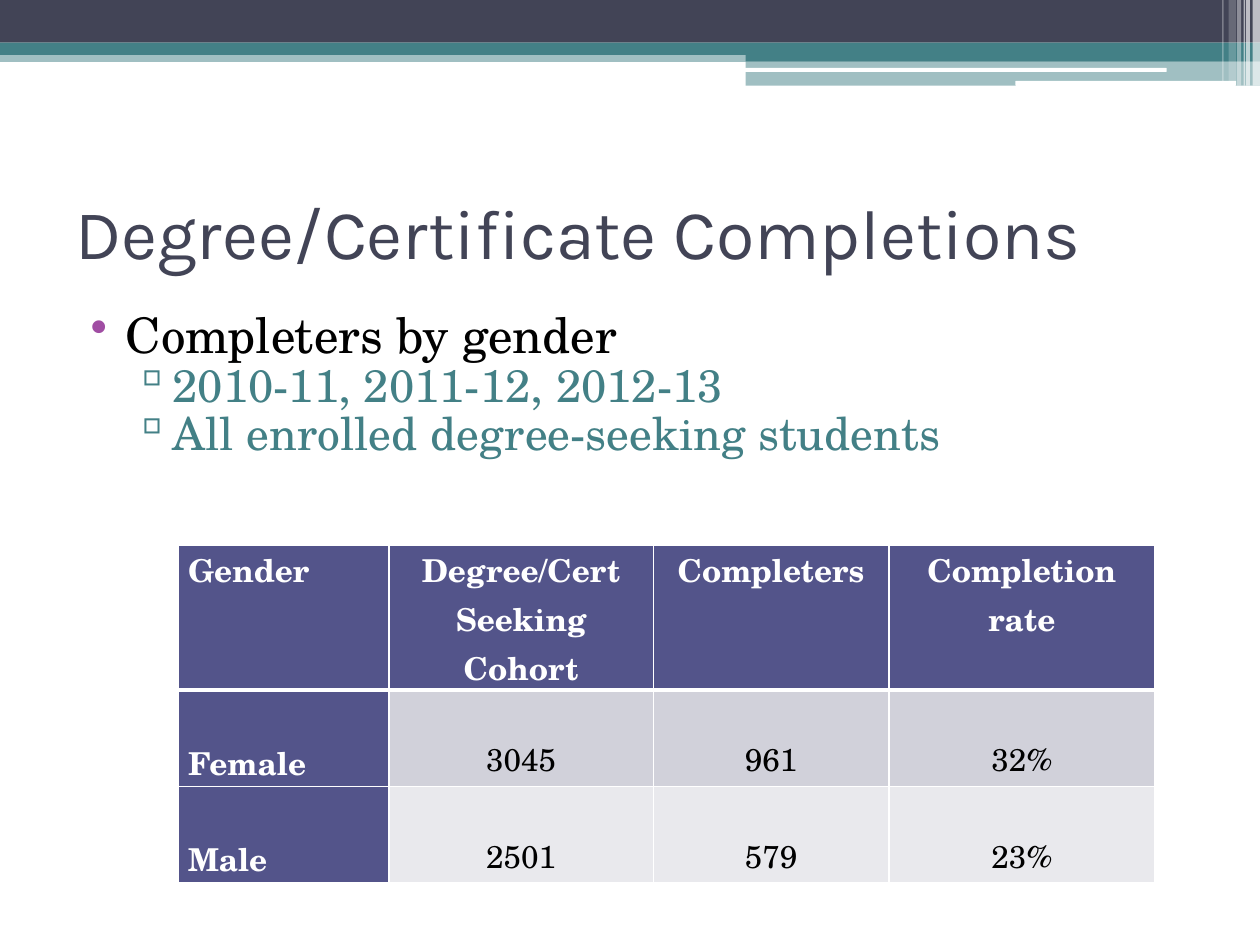
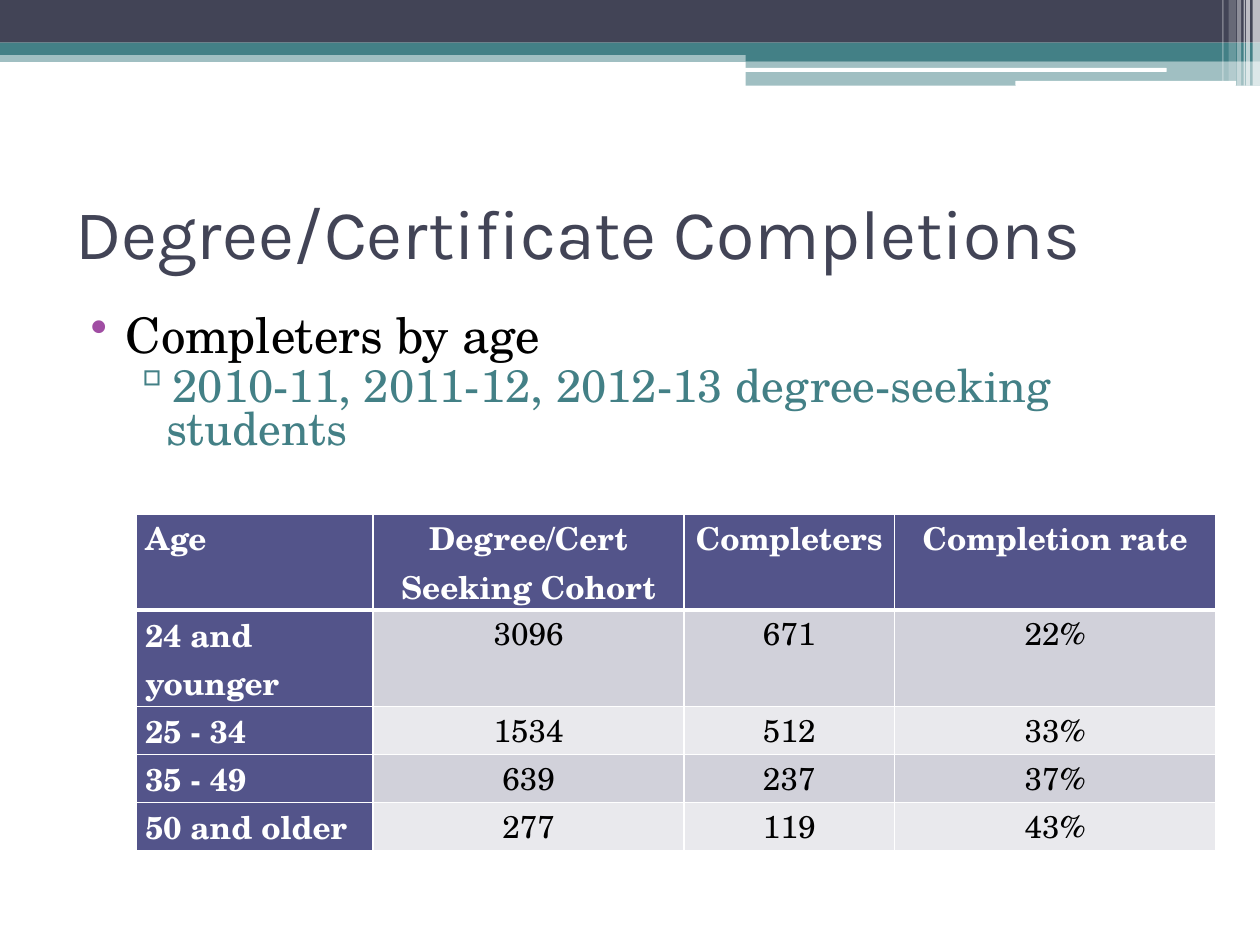
from lxml import etree
from pptx import Presentation
from pptx.dml.color import RGBColor
from pptx.enum.shapes import MSO_SHAPE
from pptx.enum.text import MSO_ANCHOR, PP_ALIGN
from pptx.oxml.ns import qn
from pptx.util import Cm, Pt

RECTANGLE = MSO_SHAPE.RECTANGLE
ROUNDED = MSO_SHAPE.ROUNDED_RECTANGLE
MIDDLE = MSO_ANCHOR.MIDDLE
LEFT, CENTER = PP_ALIGN.LEFT, PP_ALIGN.CENTER

SLATE = RGBColor(0x42, 0x44, 0x56)
TEAL = RGBColor(0x43, 0x80, 0x86)
PURPLE = RGBColor(0xA0, 0x4D, 0xA3)
INDIGO = RGBColor(0x53, 0x54, 0x8A)
ROW_DARK = RGBColor(0xD1, 0xD1, 0xDA)
ROW_LIGHT = RGBColor(0xE9, 0xE9, 0xED)
WHITE = RGBColor(0xFF, 0xFF, 0xFF)
BLACK = RGBColor(0x00, 0x00, 0x00)

TITLE_FONT = "Karla"
BODY_FONT = "TeX Gyre Schola"

TITLE = "Degree/Certificate Completions"

# Lengths in centimetres; row_lines is the height of each row in text lines.
SLIDES = [
    {
        "bullets": [
            (0, "Completers by gender"),
            (1, "2010-11, 2011-12, 2012-13"),
            (1, "All enrolled degree-seeking students"),
        ],
        "rows": [
            ("Gender", "Degree/Cert Seeking\vCohort", "Completers", "Completion rate"),
            ("Female", "3045", "961", "32%"),
            ("Male", "2501", "579", "23%"),
        ],
        "table_at": (3.6, 11.0),
        "columns": (4.24, 5.33, 4.75, 5.36),
        "row_lines": (3, 2, 2),
        "line_spacing": 2.0,
    },
    {
        "bullets": [
            (0, "Completers by age"),
            (1, "2010-11, 2011-12, 2012-13 degree-seeking students"),
        ],
        "rows": [
            ("Age", "Degree/Cert Seeking Cohort", "Completers", "Completion rate"),
            ("24 and younger", "3096", "671", "22%"),
            ("25 - 34", "1534", "512", "33%"),
            ("35 - 49", "639", "237", "37%"),
            ("50 and older", "277", "119", "43%"),
        ],
        "table_at": (2.74, 10.36),
        "columns": (4.78, 6.27, 4.24, 6.48),
        "row_lines": (2, 2, 1, 1, 1),
        "line_spacing": 1.0,
    },
]

# shape, left, top, width, height, colour, opacity in percent
BANDS = [
    (RECTANGLE, 0, 1.02, 25.4, 0.23, TEAL, 50),
    (RECTANGLE, 0, 0, 25.4, 0.86, SLATE, 100),
    (RECTANGLE, 0, 0.86, 25.4, 0.25, TEAL, 100),
    (RECTANGLE, 15.03, 0.98, 10.37, 0.25, TEAL, 100),
    (RECTANGLE, 15.03, 1.23, 10.37, 0.5, TEAL, 50),
    (ROUNDED, 15.01, 1.37, 8.51, 0.08, WHITE, 100),
    (ROUNDED, 20.47, 1.63, 4.45, 0.1, WHITE, 100),
]
# left, width, height, opacity of the white stripes in the top right corner
STRIPES = [
    (25.25, 0.15, 1.73, 65),
    (25.12, 0.08, 1.73, 65),
    (25.07, 0.03, 1.73, 60),
    (24.94, 0.08, 1.73, 40),
    (24.77, 0.15, 1.63, 20),
    (24.64, 0.03, 1.63, 30),
]
BANDS += [
    (RECTANGLE, left, 0, width, height, WHITE, opacity)
    for left, width, height, opacity in STRIPES
]

# per level: size, text colour, bullet, bullet colour, left margin, hanging indent
LEVELS = [
    (28, BLACK, "•", PURPLE, 1.02, 0.71),
    (26, TEAL, "▫", TEAL, 1.83, 0.69),
]
ROW_LINE_HEIGHT = 0.97


def format_runs(paragraph, font_name, size, color, bold=False):
    for run in paragraph.runs:
        run.font.name = font_name
        run.font.size = Pt(size)
        run.font.bold = bold
        run.font.color.rgb = color


def add_bands(slide):
    for kind, left, top, width, height, color, opacity in BANDS:
        shape = slide.shapes.add_shape(kind, Cm(left), Cm(top), Cm(width), Cm(height))
        shape.shadow.inherit = False
        shape.line.fill.background()
        shape.fill.solid()
        shape.fill.fore_color.rgb = color
        if opacity < 100:
            color_element = shape.fill._xPr.find(".//" + qn("a:srgbClr"))
            etree.SubElement(color_element, qn("a:alpha"), val=str(opacity * 1000))


def add_text_frame(slide, top, height):
    text_frame = slide.shapes.add_textbox(
        Cm(1.27), Cm(top), Cm(22.86), Cm(height)
    ).text_frame
    text_frame.word_wrap = True
    return text_frame


def add_title(slide):
    text_frame = add_text_frame(slide, 3.18, 2.97)
    text_frame.vertical_anchor = MIDDLE
    text_frame.text = TITLE
    format_runs(text_frame.paragraphs[0], TITLE_FONT, 40, SLATE)


def add_bullets(slide, bullets):
    text_frame = add_text_frame(slide, 6.25, 12.01)
    for index, (level, text) in enumerate(bullets):
        size, color, bullet, bullet_color, margin, hanging = LEVELS[level]
        paragraph = text_frame.add_paragraph() if index else text_frame.paragraphs[0]
        paragraph.text = text
        paragraph.level = level
        paragraph.line_spacing = 0.79
        paragraph.space_before = Pt(3)
        format_runs(paragraph, BODY_FONT, size, color)
        properties = paragraph._p.get_or_add_pPr()
        properties.set("marL", str(Cm(margin)))
        properties.set("indent", str(-Cm(hanging)))
        bullet_fill = etree.SubElement(properties, qn("a:buClr"))
        etree.SubElement(bullet_fill, qn("a:srgbClr"), val=str(bullet_color))
        etree.SubElement(properties, qn("a:buChar"), char=bullet)


def set_borders(cell, widths):
    """Draw white borders; widths gives left, right, top and bottom in points."""
    properties = cell._tc.get_or_add_tcPr()
    for side, width in zip("LRTB", widths):
        line = etree.SubElement(properties, qn("a:ln" + side), w=str(Pt(width)))
        fill = etree.SubElement(line, qn("a:solidFill"))
        etree.SubElement(fill, qn("a:srgbClr"), val=str(WHITE))


def add_completion_table(slide, content):
    rows, columns = content["rows"], content["columns"]
    heights = [lines * ROW_LINE_HEIGHT for lines in content["row_lines"]]
    left, top = content["table_at"]
    table = slide.shapes.add_table(
        len(rows), len(columns), Cm(left), Cm(top), Cm(sum(columns)), Cm(sum(heights))
    ).table
    for column, width in zip(table.columns, columns):
        column.width = Cm(width)
    for row, height in zip(table.rows, heights):
        row.height = Cm(height)

    for row_index, row in enumerate(rows):
        for column_index, text in enumerate(row):
            is_header = row_index == 0
            is_label = is_header or column_index == 0
            cell = table.cell(row_index, column_index)
            cell.margin_left = cell.margin_right = Cm(0.19)
            cell.margin_top = cell.margin_bottom = 0
            set_borders(
                cell, (1, 1, 3 if row_index == 1 else 1, 3 if is_header else 1)
            )
            cell.fill.solid()
            band = ROW_DARK if row_index % 2 else ROW_LIGHT
            cell.fill.fore_color.rgb = INDIGO if is_label else band
            cell.text_frame.text = text
            paragraph = cell.text_frame.paragraphs[0]
            paragraph.alignment = CENTER if column_index else LEFT
            paragraph.line_spacing = 1.0 if is_header else content["line_spacing"]
            format_runs(paragraph, BODY_FONT, 18, WHITE if is_label else BLACK, is_label)


def main():
    presentation = Presentation()
    presentation.slide_width = Cm(25.4)
    presentation.slide_height = Cm(19.05)
    blank_layout = presentation.slide_layouts[6]
    for content in SLIDES:
        slide = presentation.slides.add_slide(blank_layout)
        add_bands(slide)
        add_title(slide)
        add_bullets(slide, content["bullets"])
        add_completion_table(slide, content)
    presentation.save("out.pptx")


if __name__ == "__main__":
    main()
